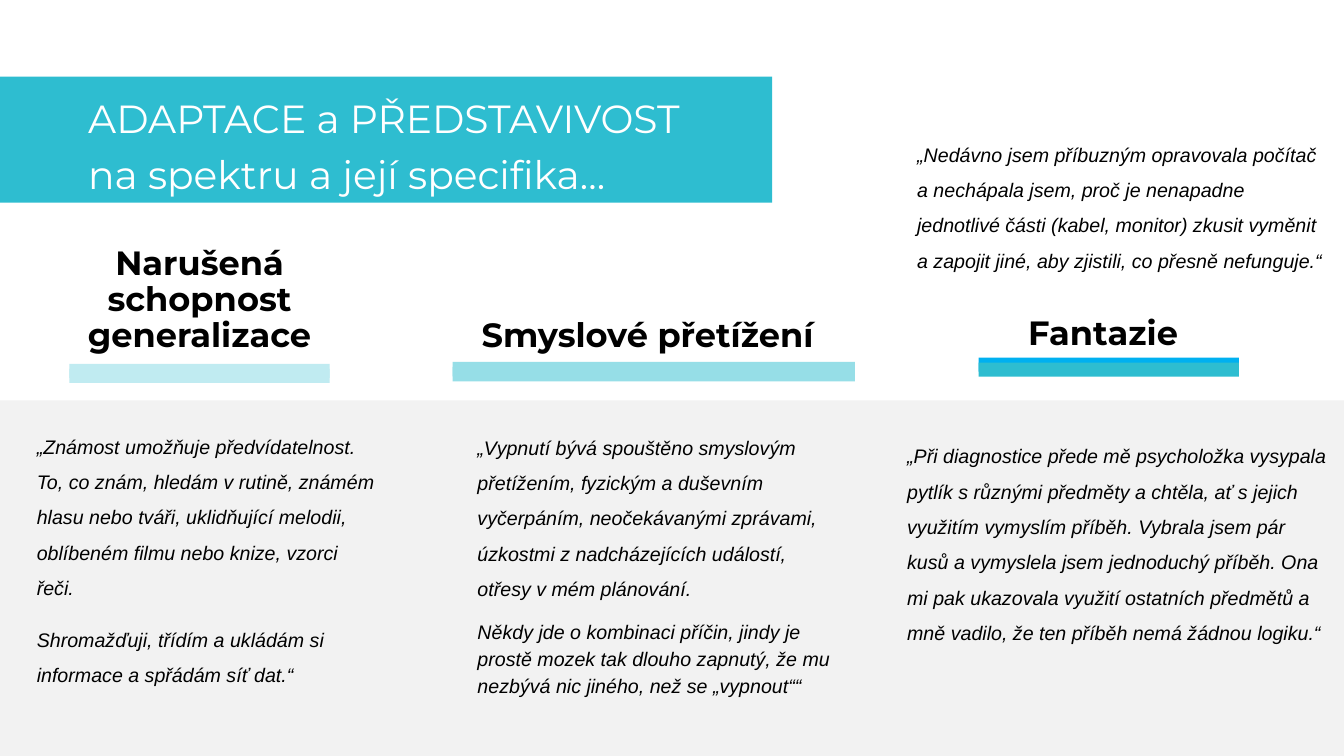
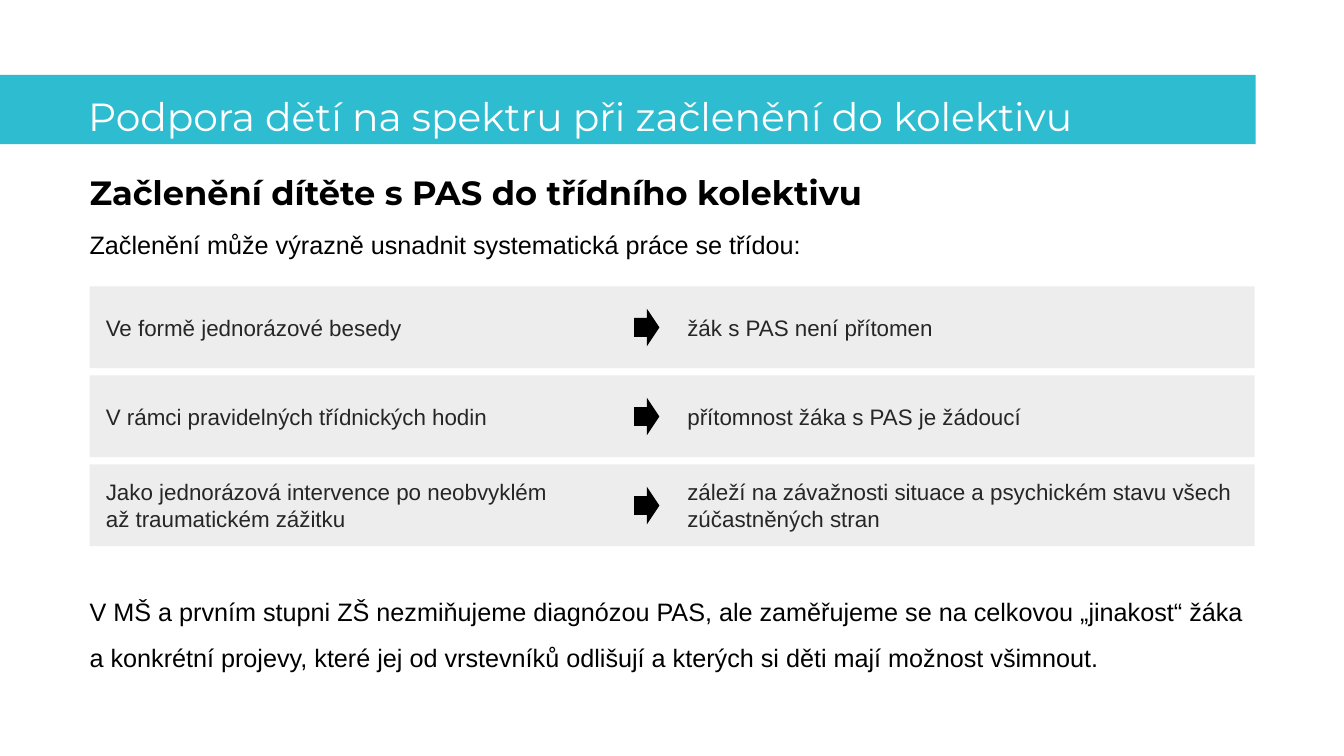
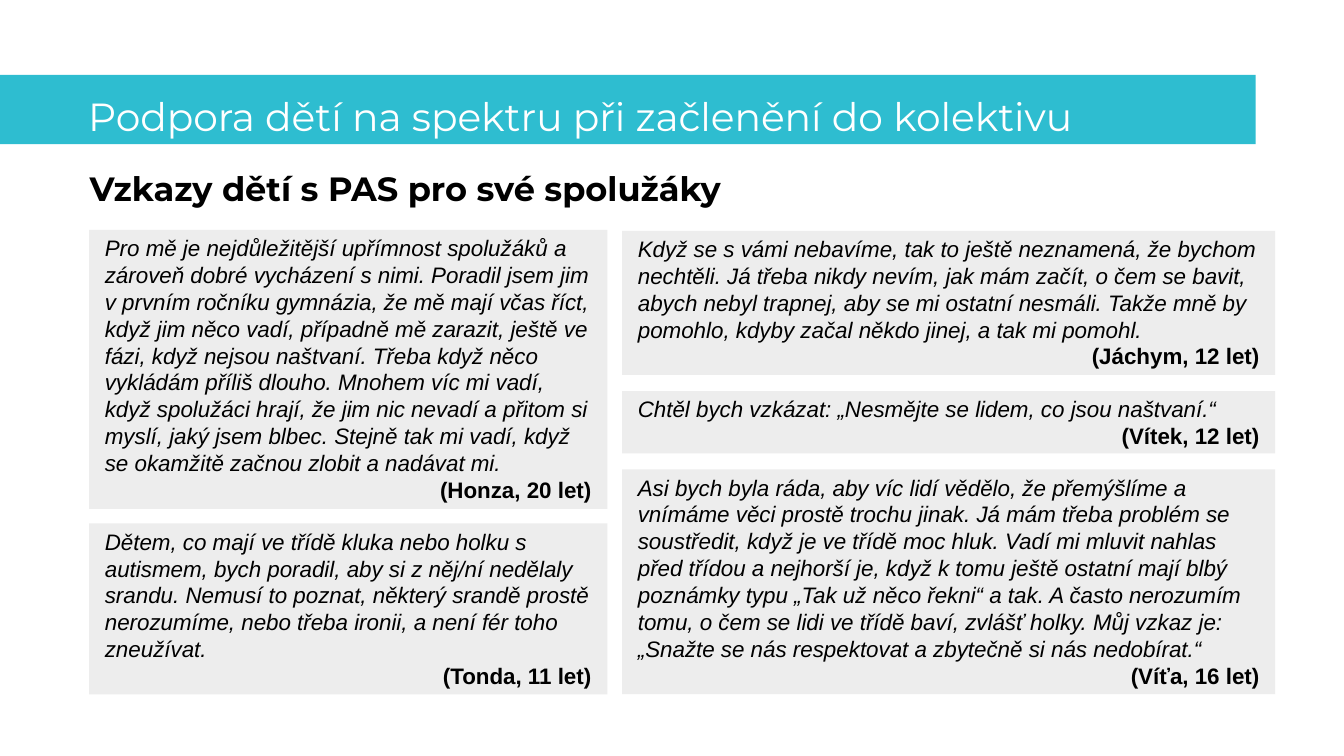
from pptx import Presentation
from pptx.dml.color import RGBColor
from pptx.enum.shapes import MSO_SHAPE
from pptx.enum.text import MSO_ANCHOR, MSO_AUTO_SIZE, PP_ALIGN
from pptx.util import Pt

RECT, ARROW = MSO_SHAPE.RECTANGLE, MSO_SHAPE.RIGHT_ARROW
TOP, MIDDLE = MSO_ANCHOR.TOP, MSO_ANCHOR.MIDDLE
LEFT, CENTER, RIGHT = PP_ALIGN.LEFT, PP_ALIGN.CENTER, PP_ALIGN.RIGHT
FIXED = MSO_AUTO_SIZE.NONE

hue = RGBColor.from_string
TEAL, SKY, PALE, SOFT = "2EBDD0", "00B0F0", "C0EBF1", "96DEE7"
PANEL, CARD, BLACK, DARK, WHITE = "F2F2F2", "EDEDED", "000000", "262626", "FFFFFF"
HEAD = dict(size=24, face="Montserrat", bold=True, line=0.9)
QUOTE = dict(size=14, italic=True, line=1.5)
NONE, SMALL = (0, 0, 0, 0), (7.2, 3.6, 7.2, 3.6)


def place(slide, at, fill=None, kind=RECT, inset=NONE, anchor=TOP):
    """Add a filled shape, or a text box if there is no fill; return its text frame."""
    spot = [Pt(n) for n in at]
    if fill:
        shape = slide.shapes.add_shape(kind, *spot)
        shape.shadow.inherit = False
        shape.fill.solid()
        shape.fill.fore_color.rgb = hue(fill)
        shape.line.fill.background()
    else:
        shape = slide.shapes.add_textbox(*spot)
    frame = shape.text_frame
    frame.word_wrap = True
    frame.vertical_anchor = anchor
    (frame.margin_left, frame.margin_top,
     frame.margin_right, frame.margin_bottom) = [Pt(n) for n in inset]
    return frame


def write(frame, text, size=16, face="Arial", color=BLACK, bold=False,
          italic=False, align=LEFT, line=1.0, before=0):
    """Fill the first paragraph if it is empty, else add another."""
    para = frame.paragraphs[0] if not frame.text else frame.add_paragraph()
    para.text = text
    para.alignment = align
    para.line_spacing = line
    para.space_before = Pt(before)
    for run in para.runs:
        font = run.font
        font.size, font.name = Pt(size), face
        font.bold, font.italic = bold, italic
        font.color.rgb = hue(color)


deck = Presentation()
deck.slide_width, deck.slide_height = Pt(960), Pt(540)

# Title bands
SUPPORT = "Podpora dětí na spektru při začlenění do kolektivu"
titles = [
    ("ADAPTACE a PŘEDSTAVIVOST\vna spektru a její specifika…", (0, 54.7, 551.5, 90)),
    (SUPPORT, (0, 53.5, 897, 49.5)),
    (SUPPORT, (0, 53.5, 897, 49.5)),
]
slides = []
for text, at in titles:
    slide = deck.slides.add_slide(deck.slide_layouts[5])
    band = slide.shapes.title
    band.left, band.top, band.width, band.height = [Pt(n) for n in at]
    band.fill.solid()
    band.fill.fore_color.rgb = hue(TEAL)
    frame = band.text_frame
    frame.auto_size, frame.word_wrap, frame.vertical_anchor = FIXED, True, TOP
    frame.margin_left, frame.margin_right = Pt(63), Pt(11.3)
    frame.margin_top = frame.margin_bottom = Pt(5.7)
    write(frame, text, size=28, face="Montserrat", color=WHITE, line=1.2)
    slides.append(slide)
traits, support, notes = slides

# Slide 1: three traits with quotes
place(traits, (0, 286, 960, 254), PANEL)
heads = [
    ("Narušená schopnost generalizace", (38, 176, 209, 78), CENTER,
     (49.5, 260, 186, 10), PALE, PALE),
    ("Smyslové přetížení", (344, 227.5, 257, 26), LEFT,
     (323.3, 258.5, 287.3, 10.5), SOFT, SOFT),
    ("Fantazie", (734.4, 226, 116, 26), LEFT,
     (699, 255.5, 186, 10), SKY, TEAL),
]
for text, at, align, (x, y, w, h), back, front in heads:
    write(place(traits, at), text, align=align, **HEAD)
    place(traits, (x, y, w, h), back)
    place(traits, (x, y + 3.5, w, h), front)

quotes = [
    ((19.2, 299, 256.5, 194.5), SMALL, MIDDLE, [
        ("„Známost umožňuje předvídatelnost. To, co znám, hledám v rutině, známém hlasu nebo "
         "tváři, uklidňující melodii, oblíbeném filmu nebo knize, vzorci řeči.", 1.5),
        ("Shromažďuji, třídím a ukládám si informace a spřádám síť dat.“", 1.5)]),
    ((334, 299, 277, 203), SMALL, MIDDLE, [
        ("„Vypnutí bývá spouštěno smyslovým přetížením, fyzickým a duševním vyčerpáním, "
         "neočekávanými zprávami, úzkostmi z nadcházejících událostí, otřesy v mém plánování.", 1.5),
        ("Někdy jde o kombinaci příčin, jindy je prostě mozek tak dlouho zapnutý, že mu nezbývá "
         "nic jiného, než se „vypnout““", 1.14)]),
    ((648, 309, 300.3, 150), NONE, TOP, [
        ("„Při diagnostice přede mě psycholožka vysypala pytlík s různými předměty a chtěla, ať "
         "s jejich využitím vymyslím příběh. Vybrala jsem pár kusů a vymyslela jsem jednoduchý "
         "příběh. Ona mi pak ukazovala využití ostatních předmětů a mně vadilo, že ten příběh "
         "nemá žádnou logiku.“", 1.5)]),
    ((648, 90, 306, 106), SMALL, TOP, [
        ("„Nedávno jsem příbuzným opravovala počítač a nechápala jsem, proč je nenapadne "
         "jednotlivé části (kabel, monitor) zkusit vyměnit a zapojit jiné, aby zjistili, "
         "co přesně nefunguje.“", 1.5)]),
]
for at, inset, anchor, paras in quotes:
    frame = place(traits, at, inset=inset, anchor=anchor)
    for i, (text, line) in enumerate(paras):
        write(frame, text, **{**QUOTE, "line": line}, before=12 if i else 0)

# Slide 2: forms of work with the class
write(place(support, (64, 126, 833, 26)), "Začlenění dítěte s PAS do třídního kolektivu", **HEAD)
write(place(support, (64, 164, 833, 22)),
      "Začlenění může výrazně usnadnit systematická práce se třídou:", size=18)
rows = [
    ("Ve formě jednorázové besedy", "žák s PAS není přítomen"),
    ("V rámci pravidelných třídnických hodin", "přítomnost žáka s PAS je žádoucí"),
    ("Jako jednorázová intervence po neobvyklém\važ traumatickém zážitku",
     "záleží na závažnosti situace a psychickém stavu všech zúčastněných stran"),
]
for i, (form, rule) in enumerate(rows):
    y = 204.6 + i * 63.6
    place(support, (64, y, 832.3, 58.4), CARD)
    place(support, (453, y + 15.8, 18, 27), BLACK, ARROW)
    for x, w, text in ((75.6, 394.5, form), (491, 393, rule)):
        write(place(support, (x, y + 10.5, w, 37.4), anchor=MIDDLE), text, color=DARK)
write(place(support, (64, 415.5, 833, 61)),
      "V MŠ a prvním stupni ZŠ nezmiňujeme diagnózou PAS, ale zaměřujeme se na celkovou "
      "„jinakost“ žáka a konkrétní projevy, které jej od vrstevníků odlišují a kterých si děti "
      "mají možnost všimnout.", size=18, line=1.5)

# Slide 3: two columns of messages
write(place(notes, (64, 123, 833, 26)), "Vzkazy dětí s PAS pro své spolužáky", **HEAD)
columns = [
    (63.6, 164.2, 370.2, 10.3, [
        (199.4, "Pro mě je nejdůležitější upřímnost spolužáků a zároveň dobré vycházení s nimi. "
         "Poradil jsem jim v prvním ročníku gymnázia, že mě mají včas říct, když jim něco vadí, "
         "případně mě zarazit, ještě ve fázi, když nejsou naštvaní. Třeba když něco vykládám "
         "příliš dlouho. Mnohem víc mi vadí, když spolužáci hrají, že jim nic nevadí a přitom si "
         "myslí, jaký jsem blbec. Stejně tak mi vadí, když se okamžitě začnou zlobit a nadávat mi.",
         "(Honza, 20 let)"),
        (122.2, "Dětem, co mají ve třídě kluka nebo holku s autismem, bych poradil, aby si z "
         "něj/ní nedělaly srandu. Nemusí to poznat, některý srandě prostě nerozumíme, nebo třeba "
         "ironii, a není fér toho zneužívat.", "(Tonda, 11 let)")]),
    (444.3, 164.9, 466.6, 11.4, [
        (103, "Když se s vámi nebavíme, tak to ještě neznamená, že bychom nechtěli. Já třeba "
         "nikdy nevím, jak mám začít, o čem se bavit, abych nebyl trapnej, aby se mi ostatní "
         "nesmáli. Takže mně by pomohlo, kdyby začal někdo jinej, a tak mi pomohl.",
         "(Jáchym, 12 let)"),
        (44.6, "Chtěl bych vzkázat: „Nesmějte se lidem, co jsou naštvaní.“", "(Vítek, 12 let)"),
        (160.6, "Asi bych byla ráda, aby víc lidí vědělo, že přemýšlíme a vnímáme věci prostě "
         "trochu jinak. Já mám třeba problém se soustředit, když je ve třídě moc hluk. Vadí mi "
         "mluvit nahlas před třídou a nejhorší je, když k tomu ještě ostatní mají blbý poznámky "
         "typu „Tak už něco řekni“ a tak. A často nerozumím tomu, o čem se lidi ve třídě baví, "
         "zvlášť holky. Můj vzkaz je: „Snažte se nás respektovat a zbytečně si nás nedobírat.“",
         "(Víťa, 16 let)")]),
]
for x, y, w, gap, cards in columns:
    for h, text, child in cards:
        frame = place(notes, (x, y, w, h), CARD, inset=(11.3, 3.1, 11.3, 3.1))
        write(frame, text, italic=True)
        write(frame, child, bold=True, align=RIGHT)
        y += h + gap

deck.save("out.pptx")
